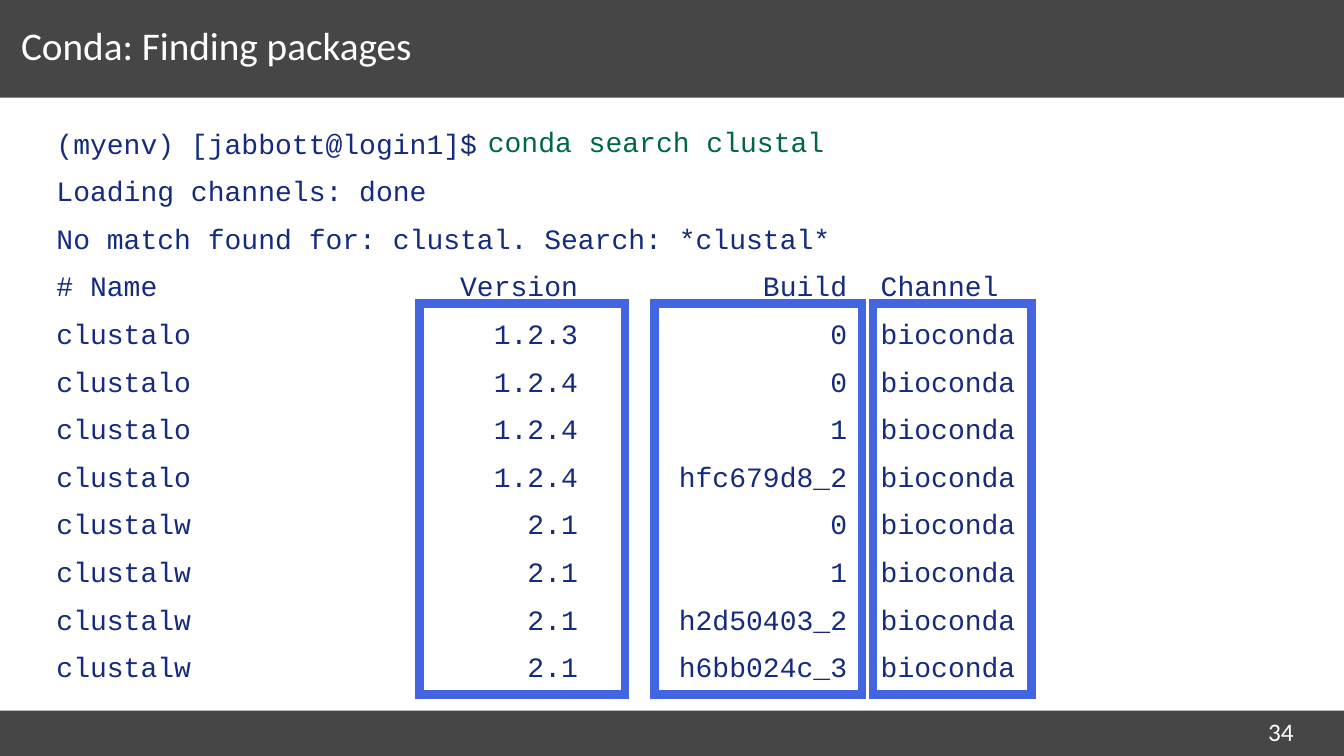
from pptx import Presentation
from pptx.dml.color import RGBColor
from pptx.enum import shapes, text
from pptx.oxml import parse_xml
from pptx.oxml.ns import nsdecls
from pptx.util import Inches, Pt

# Content
TITLE = "Conda: Finding packages"
PAGE = "34"
COMMAND = "conda search clustal"
MESSAGES = [
    "(myenv) [jabbott@login1]$",
    "Loading channels: done",
    "No match found for: clustal. Search: *clustal*",
]
PACKAGES = [
    ("# Name", "Version", "Build", "Channel"),
    ("clustalo", "1.2.3", "0", "bioconda"),
    ("clustalo", "1.2.4", "0", "bioconda"),
    ("clustalo", "1.2.4", "1", "bioconda"),
    ("clustalo", "1.2.4", "hfc679d8_2", "bioconda"),
    ("clustalw", "2.1", "0", "bioconda"),
    ("clustalw", "2.1", "1", "bioconda"),
    ("clustalw", "2.1", "h2d50403_2", "bioconda"),
    ("clustalw", "2.1", "h6bb024c_3", "bioconda"),
]

# Format and layout, in inches
GREY, NAVY, GREEN, BLUE, WHITE = "464646", "142B7F", "00683E", "4365E2", "FFFFFF"
HEADING = {"name": "Calibri", "size": Pt(28)}
NUMBER = {"name": "Calibri", "size": Pt(18)}
CODE = {"name": "Courier New", "size": Pt(20)}
WIDTH, HEIGHT = 13.33, 7.5
BARS = [(0, 0.97), (7.05, 0.45)]  # top, height
FRAMES = [(4.16, 2.04), (6.49, 2.06), (8.66, 1.57)]  # left, width
FRAME_TOP, FRAME_HEIGHT = 3.01, 3.88
# Terminal output: fixed-width columns, as the command prints them
OUTPUT_ROW = "{:<20}{:>11}{:>16}  {}"


def color(value):
    return RGBColor.from_string(value)


def style(font, values, value):
    for key, setting in values.items():
        setattr(font, key, setting)
    font.color.rgb = color(value)


def place(shape, left, top, width, height):
    box = {"left": left, "top": top, "width": width, "height": height}
    for key, length in box.items():
        setattr(shape, key, Inches(length))


def set_frame(frame, anchor):
    values = {"margin_left": 0, "margin_right": 0, "word_wrap": True,
              "auto_size": text.MSO_AUTO_SIZE.NONE, "vertical_anchor": anchor}
    for key, setting in values.items():
        setattr(frame, key, setting)


def add_rectangle(slide, left, top, width, height):
    rectangle = slide.shapes.add_shape(
        shapes.MSO_SHAPE.RECTANGLE, *map(Inches, (left, top, width, height)))
    rectangle.shadow.inherit = False
    return rectangle


def add_label(slide, label, box, font_values, value):
    frame = slide.shapes.add_textbox(*map(Inches, box)).text_frame
    frame.word_wrap = True
    paragraph = frame.paragraphs[0]
    paragraph.text = label
    style(paragraph.font, font_values, value)


def remove_bullet(paragraph):
    properties = paragraph._p.get_or_add_pPr()
    properties.set("marL", "0")
    properties.set("indent", "0")
    properties.append(parse_xml(f"<a:buNone {nsdecls('a')}/>"))


def main():
    deck = Presentation()
    deck.slide_width, deck.slide_height = Inches(WIDTH), Inches(HEIGHT)
    slide = deck.slides.add_slide(deck.slide_layouts[1])
    title, listing = slide.placeholders

    # Bars behind the placeholders
    for top, height in BARS:
        bar = add_rectangle(slide, 0, top, WIDTH, height)
        bar.fill.solid()
        bar.fill.fore_color.rgb = color(GREY)
        bar.line.fill.background()
        slide.shapes.element.insert(2, bar.element)

    # Title
    place(title, 0.21, 0.17, 11.52, 0.64)
    set_frame(title.text_frame, text.MSO_ANCHOR.MIDDLE)
    title.text_frame.text = TITLE
    heading = title.text_frame.paragraphs[0]
    heading.alignment = text.PP_ALIGN.LEFT
    heading.line_spacing = 0.8
    style(heading.font, HEADING, WHITE)

    # Terminal listing
    place(listing, 0.56, 1.2, 12.2, 5.67)
    set_frame(listing.text_frame, text.MSO_ANCHOR.TOP)
    lines = MESSAGES + [OUTPUT_ROW.format(*package) for package in PACKAGES]
    listing.text_frame.text = "\n".join(lines)
    for index, paragraph in enumerate(listing.text_frame.paragraphs):
        remove_bullet(paragraph)
        paragraph.space_before = Pt(6 if index else 0)
        paragraph.space_after = Pt(4)
        style(paragraph.font, CODE, NAVY)

    # Square-cornered frames around the version, build and channel columns
    for left, width in FRAMES:
        frame = add_rectangle(slide, left, FRAME_TOP, width, FRAME_HEIGHT)
        frame.fill.background()
        frame.line.color.rgb = color(BLUE)
        frame.line.width = Pt(6)
        frame.line._get_or_add_ln().append(
            parse_xml(f'<a:miter {nsdecls("a")} lim="800000"/>'))

    # Typed command and page number
    add_label(slide, COMMAND, (4.74, 1.19, 3.93, 0.44), CODE, GREEN)
    add_label(slide, PAGE, (12.48, 7.06, 0.7, 0.25), NUMBER, WHITE)

    deck.save("out.pptx")


if __name__ == "__main__":
    main()
